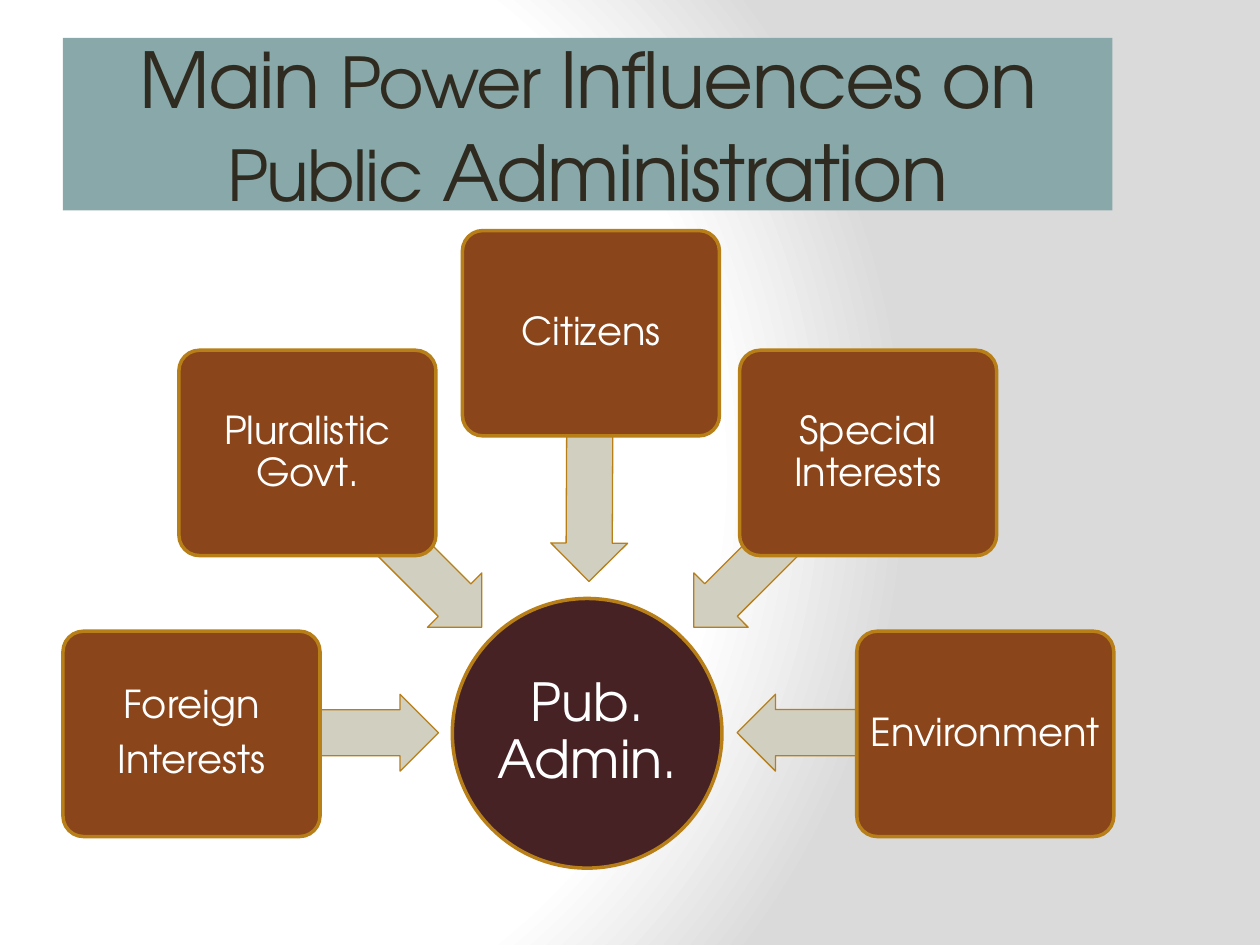
"""Build a slide of the main power influences on public administration."""
from lxml import etree
from pptx import Presentation, util as u
from pptx.dml.color import RGBColor
from pptx.enum import shapes, text
from pptx.oxml.ns import nsdecls

FONT = "TeX Gyre Adventor"
KIND = shapes.MSO_SHAPE


def paint(part, hue):
    part.solid()
    part.fore_color.rgb = RGBColor.from_string(hue)


def add(home, kind, spot, fill, edge=0, words="", size=22, inset=0.05):
    shape = home.add_shape(kind, *[u.Inches(n) for n in spot])
    shape.shadow.inherit = False
    paint(shape.fill, fill)
    if edge:
        paint(shape.line.fill, "B87F18")
        shape.line.width = u.Pt(edge)
    else:
        shape.line.fill.background()
    if words:
        frame = shape.text_frame
        frame.text = words
        frame.word_wrap = True
        frame.vertical_anchor = text.MSO_ANCHOR.MIDDLE
        frame.margin_left = frame.margin_right = u.Inches(inset)
        frame.margin_top = frame.margin_bottom = u.Inches(inset)
        for para in frame.paragraphs:
            para.alignment = text.PP_ALIGN.CENTER
            para.line_spacing = 0.9
            para.space_after = u.Pt(size * 0.35)
            for run in para.runs:
                run.font.name = FONT
                run.font.size = u.Pt(size)
                paint(run.font.fill, "FFFFFF")
    return shape


deck = Presentation()
deck.slide_width, deck.slide_height = u.Inches(10), u.Inches(7.5)
slide = deck.slides.add_slide(deck.slide_layouts[6])

stops = "".join(
    f'<a:gs pos="{pos}000"><a:srgbClr val="{hue}"/></a:gs>'
    for pos, hue in [(0, "FFFFFF"), (75, "FFFFFF"), (100, "DADADA")])
back = etree.fromstring(
    f'<p:bg {nsdecls("p", "a")}><p:bgPr><a:gradFill rotWithShape="1">'
    f'<a:gsLst>{stops}</a:gsLst><a:path path="circle">'
    '<a:fillToRect l="20000" t="50000" r="100000" b="50000"/></a:path>'
    '</a:gradFill><a:effectLst/></p:bgPr></p:bg>')
slide.element.cSld.insert(0, back)

title = add(slide.shapes, KIND.RECTANGLE, (0.5, 0.3, 8.33, 1.37), "88A8AA")
title.text_frame.word_wrap = True
title.text_frame.vertical_anchor = text.MSO_ANCHOR.MIDDLE
para = title.text_frame.paragraphs[0]
para.alignment = text.PP_ALIGN.CENTER
for words, size in [("Main ", 44), ("Power", 40), (" Influences on ", 44),
                    ("Public", 40), (" Administration", 44)]:
    run = para.add_run()
    run.text = words
    run.font.name = FONT
    run.font.size = u.Pt(size)
    paint(run.font.fill, "2F2B20")
    run.font._element.set("spc", "-100")

group = slide.shapes.add_group_shape().shapes
add(group, KIND.OVAL, (3.59, 4.75, 2.14, 2.14), "462225", 2,
    "Pub. Admin.", 30, 0.02)

for words, left, top, mid_x, mid_y, turn in [
        ("Foreign\nInterests", 0.5, 5.01, 2.5, 5.82, 180),
        ("Pluralistic Govt.", 1.42, 2.78, 3.13, 4.29, 225),
        ("Citizens", 3.67, 1.83, 4.68, 3.64, 270.3),
        ("Special Interests", 5.87, 2.78, 6.2, 4.29, 315),
        ("Environment", 6.8, 5.01, 6.83, 5.82, 0)]:
    arrow = add(group, KIND.LEFT_ARROW,
                (mid_x - 0.98, mid_y - 0.31, 1.96, 0.61), "D1CFBF", 0.75)
    arrow.adjustments[0] = 0.6
    arrow.adjustments[1] = 0.5
    arrow.rotation = turn
    box = add(group, KIND.ROUNDED_RECTANGLE, (left, top, 2.04, 1.63),
              "8A451A", 2, words)
    box.adjustments[0] = 0.1

deck.save("out.pptx")
